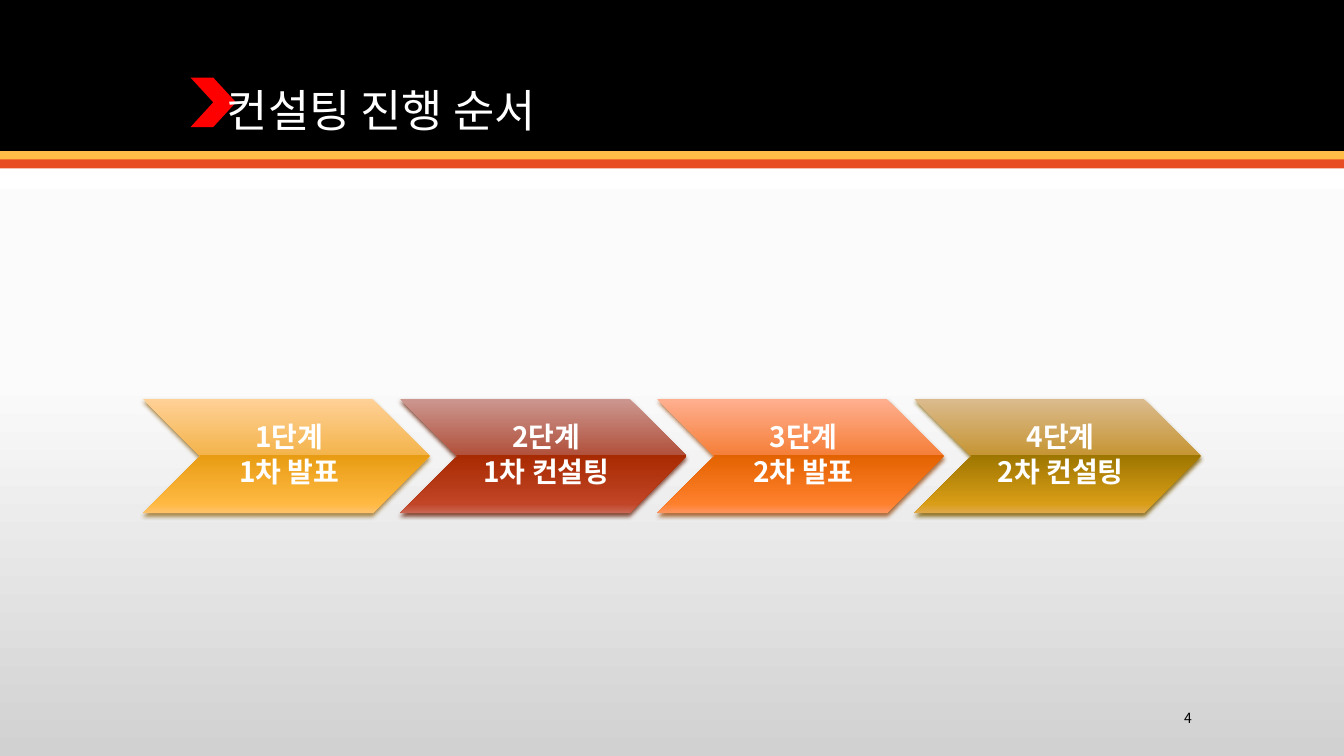
from lxml import etree
from pptx import Presentation
from pptx.dml.color import RGBColor
from pptx.enum.shapes import MSO_SHAPE
from pptx.enum.text import MSO_ANCHOR, PP_ALIGN
from pptx.oxml.ns import qn
from pptx.util import Inches, Pt

RECT, CHEVRON = MSO_SHAPE.RECTANGLE, MSO_SHAPE.CHEVRON
MIDDLE, BOTTOM = MSO_ANCHOR.MIDDLE, MSO_ANCHOR.BOTTOM
LEFT, CENTER, RIGHT = PP_ALIGN.LEFT, PP_ALIGN.CENTER, PP_ALIGN.RIGHT
FONT = "Noto Sans CJK KR"
BLACK = RGBColor(0x00, 0x00, 0x00)
WHITE = RGBColor(0xFF, 0xFF, 0xFF)
GOLD = RGBColor(0xFF, 0xBD, 0x47)
ORANGE = RGBColor(0xE8, 0x4C, 0x22)
RED = RGBColor(0xFF, 0x00, 0x00)

PAGE = [(0, "FFFFFF"), (50, "FBFBFB"), (100, "D1D1D1")]
STOPS = (0, 49, 49, 92, 100)
STEPS = [
    ("1단계\n1차 발표", "FFD197 F4B44C E89C13 FFB942 FFC36A", "9D752C"),
    ("2단계\n1차 컨설팅", "CC9790 B1513C A82A02 C14526 C96654", "702D17"),
    ("3단계\n2차 발표", "FFAF90 F57F39 E36200 FF802C FF945E", "9D5218"),
    ("4단계\n2차 컨설팅", "DBBB8E C69534 9D7600 D99D17 DFA94C", "7E5E00"),
]


def add_node(parent, tag, **attrs):
    return etree.SubElement(parent, qn(tag), {k: str(v) for k, v in attrs.items()})


def set_grad(fill, root, stops):
    fill.gradient()
    fill.gradient_angle = 270
    items = root.find(".//" + qn("a:gsLst"))
    for item in list(items):
        items.remove(item)
    for pos, color in stops:
        stop = add_node(items, "a:gs", pos=pos * 1000)
        add_node(stop, "a:srgbClr", val=color)


def set_shadow(shape, color):
    shape.shadow.inherit = False
    effects = shape._element.spPr.find(qn("a:effectLst"))
    shadow = add_node(effects, "a:outerShdw", blurRad=Pt(3.1), dist=Pt(2),
                      dir=5400000, algn="ctr", rotWithShape=0)
    tint = add_node(shadow, "a:srgbClr", val=color)
    add_node(tint, "a:alpha", val=83000)


def set_text(frame, text, size, color, align, anchor, bold=False, line=1.0, after=0):
    frame.text = text
    frame.word_wrap = True
    frame.vertical_anchor = anchor
    for para in frame.paragraphs:
        para.alignment = align
        para.line_spacing = line
        para.space_before = Pt(0)
        para.space_after = Pt(after)
        for run in para.runs:
            font = run.font
            font.name, font.size, font.bold = FONT, Pt(size), bold
            font.color.rgb = color
            add_node(run._r.get_or_add_rPr(), "a:ea", typeface=FONT)


def add_shape(slide, kind, left, top, width, height, color=None):
    shape = slide.shapes.add_shape(
        kind, Inches(left), Inches(top), Inches(width), Inches(height))
    shape.shadow.inherit = False
    shape.line.fill.background()
    if color is not None:
        shape.fill.solid()
        shape.fill.fore_color.rgb = color
    return shape


def add_title(slide, text):
    title = slide.shapes.title
    title.left, title.top = Inches(1.42), Inches(0.28)
    title.width, title.height = Inches(10.5), Inches(1.13)
    frame = title.text_frame
    set_text(frame, text, 32, WHITE, LEFT, BOTTOM, line=0.9)
    frame.margin_left = Inches(0.83)
    slide.shapes._spTree.append(title._element)


def add_step(slide, left, text, colors, shade):
    step = add_shape(slide, CHEVRON, left, 3.96, 2.84, 1.13)
    set_grad(step.fill, step._element.spPr, zip(STOPS, colors.split()))
    set_shadow(step, shade)
    frame = step.text_frame
    set_text(frame, text, 20, WHITE, CENTER, MIDDLE, True, 0.9, 3)
    frame.margin_left = Inches(0.09)
    frame.margin_right = frame.margin_top = frame.margin_bottom = Inches(0.03)


def add_number(slide, text):
    box = slide.shapes.add_textbox(
        Inches(10.42), Inches(6.97), Inches(1.5), Inches(0.3))
    set_text(box.text_frame, text, 10, BLACK, RIGHT, MIDDLE)


def main():
    deck = Presentation()
    deck.slide_width, deck.slide_height = Inches(13.33), Inches(7.5)
    slide = deck.slides.add_slide(deck.slide_layouts[5])
    set_grad(slide.background.fill, slide._element, PAGE)
    for top, height, color in [(0, 1.5, BLACK), (1.5, 0.09, GOLD), (1.58, 0.09, ORANGE)]:
        add_shape(slide, RECT, 0, top, 13.33, height, color)
    add_shape(slide, CHEVRON, 1.89, 0.77, 0.45, 0.49, RED)
    add_title(slide, "컨설팅 진행 순서")
    for i, step in enumerate(STEPS):
        add_step(slide, 1.42 + 2.55 * i, *step)
    add_number(slide, "4")
    deck.save("out.pptx")


if __name__ == "__main__":
    main()
